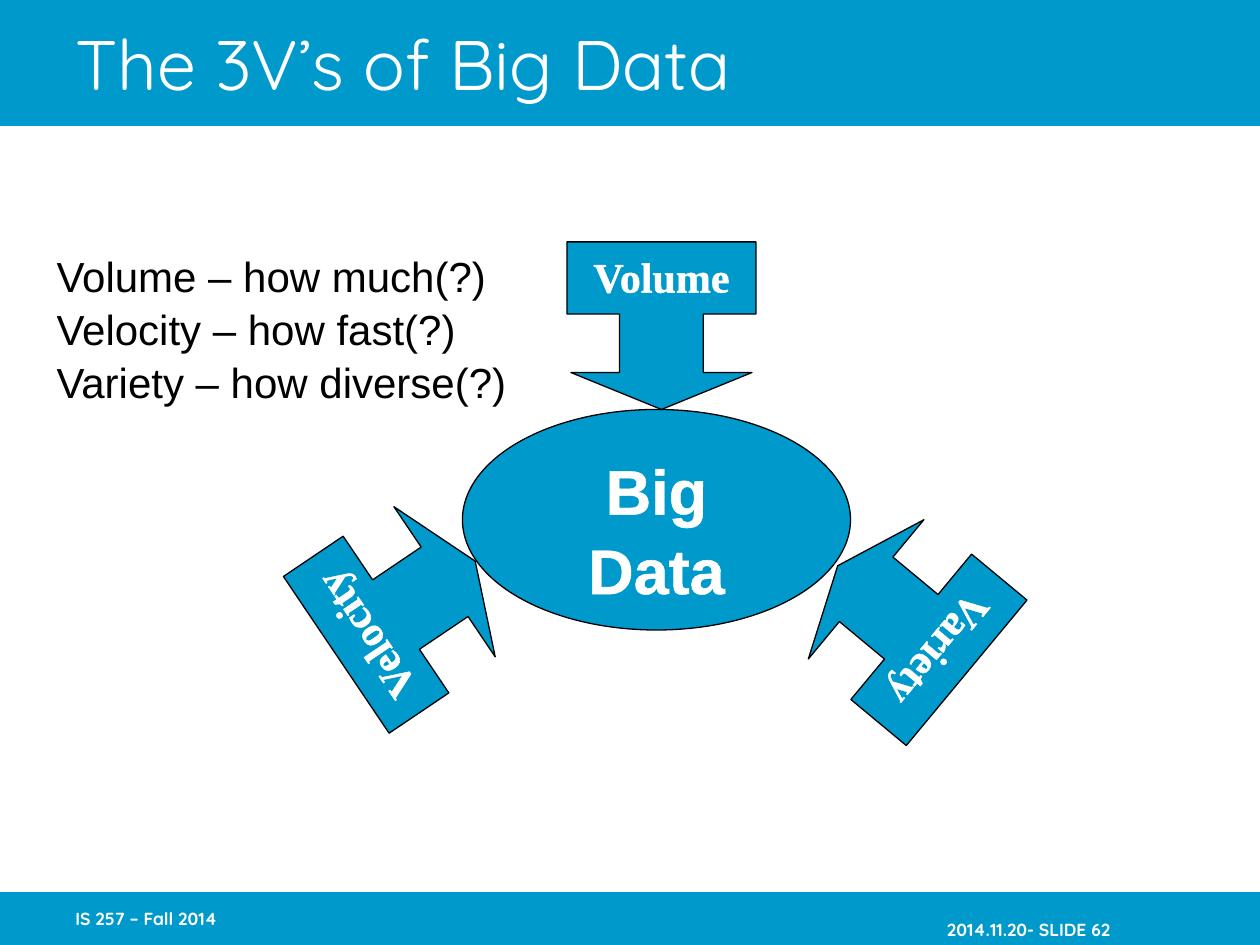
import pptx
import pptx.util
import pptx.dml.color
import pptx.enum.shapes
import pptx.enum.text
import pptx.oxml
import pptx.oxml.ns
from pptx.util import Inches

COLORS = {"blue": "0099CC", "white": "FFFFFF", "black": "000000", "glyph_edge": "FEFEFE"}

TITLE = "The 3V’s of Big Data"
QUESTIONS = ["Volume – how much(?)", "Velocity – how fast(?)", "Variety – how diverse(?)"]
CENTRE = "Big Data"
# label, left, top, rotation
ARROWS = [
    ("Volume", 4.5, 1.92, 0),
    ("Velocity", 2.47, 4.16, 236),
    ("Variety", 6.41, 4.25, 129.7),
]
ARROW_SIZE = (1.5, 1.33)
ARROW_ADJUSTMENTS = (0.5, 0.54, 0.22, 0.43)
BANDS = [(0, 1), (7.08, 0.42)]  # top, height
COURSE = "IS 257 – Fall 2014"
SLIDE_NUMBER = "2014.11.20- SLIDE 62"

SHAPES = pptx.enum.shapes.MSO_SHAPE
ALIGN = pptx.enum.text.PP_ALIGN
ANCHOR = pptx.enum.text.MSO_ANCHOR


def rgb(name):
    return pptx.dml.color.RGBColor.from_string(COLORS[name])


def write(shape, lines, size, font, color="white", bold=False, align=ALIGN.LEFT,
          anchor=ANCHOR.TOP, wrap=True, spacing=None, outlined=False):
    frame = shape.text_frame
    frame.word_wrap = wrap
    frame.vertical_anchor = anchor
    for i, line in enumerate(lines):
        paragraph = frame.paragraphs[0] if i == 0 else frame.add_paragraph()
        paragraph.alignment = align
        if spacing:
            paragraph.line_spacing = spacing
        run = paragraph.add_run()
        run.text = line
        run.font.size = pptx.util.Pt(size)
        run.font.name = font
        run.font.bold = bold
        run.font.color.rgb = rgb(color)
        if outlined:
            run.font._element.insert(0, pptx.oxml.parse_xml(
                f'<a:ln {pptx.oxml.ns.nsdecls("a")} w="19050"><a:solidFill>'
                f'<a:srgbClr val="{COLORS["glyph_edge"]}"/></a:solidFill></a:ln>'))
    return frame


def add_blue_shape(slide, kind, left, top, width, height, edged=True):
    shape = slide.shapes.add_shape(
        kind, Inches(left), Inches(top), Inches(width), Inches(height))
    shape.shadow.inherit = False
    shape.fill.solid()
    shape.fill.fore_color.rgb = rgb("blue")
    if edged:
        shape.line.color.rgb = rgb("black")
        shape.line.width = pptx.util.Pt(0.75)
    else:
        shape.line.fill.background()
    return shape


def add_box(slide, left, top, width, height):
    return slide.shapes.add_textbox(
        Inches(left), Inches(top), Inches(width), Inches(height))


def main():
    deck = pptx.Presentation()
    deck.slide_width, deck.slide_height = Inches(10), Inches(7.5)
    slide = deck.slides.add_slide(deck.slide_layouts[5])

    for top, height in BANDS:
        add_blue_shape(slide, SHAPES.RECTANGLE, 0, top, 10, height, edged=False)

    title = slide.shapes.title
    title.left, title.top = Inches(0.5), Inches(0)
    title.width, title.height = Inches(8.5), Inches(1)
    write(title, [TITLE], 40, "Quicksand", anchor=ANCHOR.MIDDLE)
    slide.shapes._spTree.append(title._element)  # in front of the top band

    centre = add_blue_shape(slide, SHAPES.OVAL, 3.67, 3.25, 3.08, 1.75)
    write(centre, [CENTRE], 36, "Arial", bold=True, align=ALIGN.CENTER,
          spacing=1.05, outlined=True)

    for label, left, top, rotation in ARROWS:
        arrow = add_blue_shape(slide, SHAPES.DOWN_ARROW_CALLOUT, left, top, *ARROW_SIZE)
        for i, value in enumerate(ARROW_ADJUSTMENTS):
            arrow.adjustments[i] = value
        arrow.rotation = rotation
        write(arrow, [label], 24, "Times New Roman", bold=True, align=ALIGN.CENTER,
              spacing=1.05, outlined=True)

    write(add_box(slide, 0.35, 1.92, 3.81, 1.31), QUESTIONS, 24, "Arial",
          color="black", wrap=False, spacing=1.05)

    footer = {"size": 10, "font": "Quicksand", "bold": True, "anchor": ANCHOR.MIDDLE}
    write(add_box(slide, 0.5, 7.08, 2.08, 0.42), [COURSE], **footer)
    number = write(add_box(slide, 6.73, 7.17, 2.08, 0.42), [SLIDE_NUMBER],
                   align=ALIGN.RIGHT, **footer)
    number.margin_right = 0

    deck.save("out.pptx")


if __name__ == "__main__":
    main()
